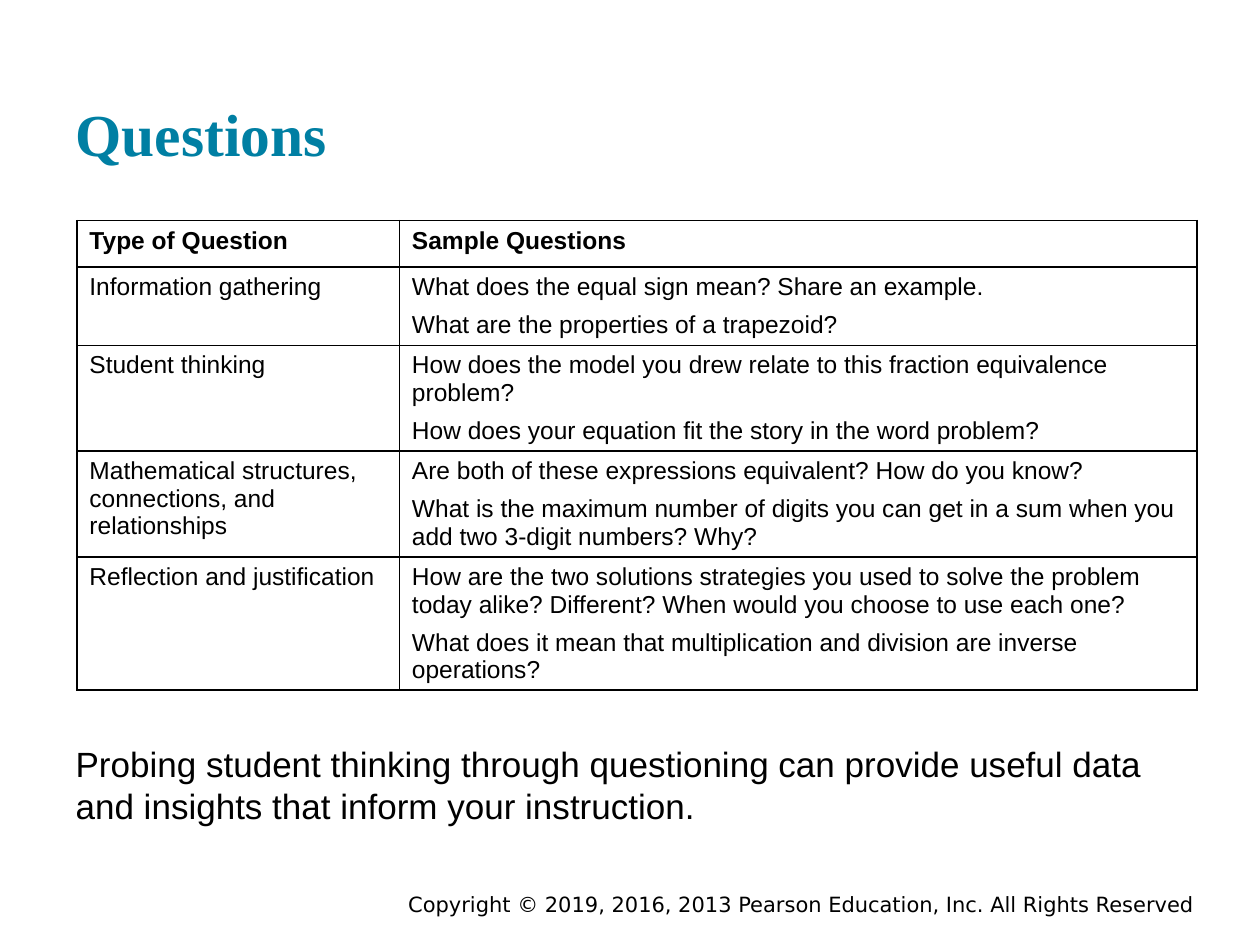
from dataclasses import dataclass

from pptx import Presentation, util as u
from pptx.dml.color import RGBColor
from pptx.enum import text as t
from pptx.oxml import parse_xml
from pptx.oxml.ns import nsdecls


@dataclass(frozen=True)
class Theme:
    black: str = "000000"
    teal: str = "007FA3"
    serif: str = "Times New Roman"
    sans: str = "Arial"
    legal: str = "DejaVu Sans"
    head: int = 34
    body: int = 20
    cell: int = 14
    foot: int = 12


THEME = Theme()
COLS = [2.56, 6.33]
ROWS = [0.37, 0.59, 0.84, 0.84, 0.84]
TABLE = [
    (["Type of Question"], ["Sample Questions"]),
    (["Information gathering"],
     ["What does the equal sign mean? Share an example.",
      "What are the properties of a trapezoid?"]),
    (["Student thinking"],
     ["How does the model you drew relate to this fraction equivalence problem?",
      "How does your equation fit the story in the word problem?"]),
    (["Mathematical structures, connections, and relationships"],
     ["Are both of these expressions equivalent? How do you know?",
      "What is the maximum number of digits you can get in a sum "
      "when you add two 3-digit numbers? Why?"]),
    (["Reflection and justification"],
     ["How are the two solutions strategies you used to solve the problem "
      "today alike? Different? When would you choose to use each one?",
      "What does it mean that multiplication and division are inverse operations?"]),
]


def place(shape, left, top, width, height):
    shape.left, shape.top = u.Inches(left), u.Inches(top)
    shape.width, shape.height = u.Inches(width), u.Inches(height)


def set_frame(frame, anchor, inset):
    frame.word_wrap = True
    frame.auto_size = t.MSO_AUTO_SIZE.NONE
    frame.vertical_anchor = anchor
    frame.margin_left = frame.margin_right = u.Inches(inset)
    frame.margin_top = frame.margin_bottom = u.Inches(inset)


def write(para, words, face, size, color=THEME.black, bold=False,
          align=t.PP_ALIGN.LEFT, before=0):
    para.alignment = align
    para.space_before = u.Pt(before)
    run = para.add_run()
    run.text = words
    font = run.font
    font.name, font.size, font.bold = face, u.Pt(size), bold
    font.color.rgb = RGBColor.from_string(color)


def add_title(slide, words):
    shape = slide.shapes.title
    place(shape, 0.5, 0.24, 9, 1.2)
    set_frame(shape.text_frame, t.MSO_ANCHOR.BOTTOM, 0.1)
    write(shape.text_frame.paragraphs[0], words, THEME.serif, THEME.head,
          THEME.teal, bold=True)


def add_body(slide, words):
    shape = slide.placeholders[1]
    place(shape, 0.5, 5.79, 9, 0.78)
    set_frame(shape.text_frame, t.MSO_ANCHOR.TOP, 0.1)
    para = shape.text_frame.paragraphs[0]
    # Plain paragraph: no bullet, no hanging indent
    props = para._p.get_or_add_pPr()
    props.set("marL", "0")
    props.set("indent", "0")
    props.append(parse_xml(f"<a:buNone {nsdecls('a')}/>"))
    write(para, words, THEME.sans, THEME.body)


def add_borders(cell):
    props = cell._tc.get_or_add_tcPr()
    for pos, side in enumerate(("lnL", "lnR", "lnT", "lnB")):
        props.insert(pos, parse_xml(
            f'<a:{side} {nsdecls("a")} w="{u.Pt(1)}"><a:solidFill>'
            f'<a:srgbClr val="{THEME.black}"/></a:solidFill></a:{side}>'))


def fill_cell(cell, lines, bold):
    cell.fill.background()
    add_borders(cell)
    frame = cell.text_frame
    for i, line in enumerate(lines):
        para = frame.add_paragraph() if i else frame.paragraphs[0]
        write(para, line, THEME.sans, THEME.cell, bold=bold,
              before=6 if i else 0)


def add_grid(slide):
    frame = slide.shapes.add_table(
        len(ROWS), len(COLS), u.Inches(0.61), u.Inches(1.75),
        u.Inches(sum(COLS)), u.Inches(sum(ROWS)))
    table = frame.table
    table.first_row = table.horz_banding = False
    for col, width in zip(table.columns, COLS):
        col.width = u.Inches(width)
    for r, (row, height) in enumerate(zip(table.rows, ROWS)):
        row.height = u.Inches(height)
        for cell, lines in zip(row.cells, TABLE[r]):
            fill_cell(cell, lines, bold=r == 0)


def add_footer(slide, words):
    box = slide.shapes.add_textbox(0, 0, 0, 0)
    place(box, 2.92, 7.05, 6.66, 0.25)
    set_frame(box.text_frame, t.MSO_ANCHOR.MIDDLE, 0.1)
    box.text_frame.margin_top = box.text_frame.margin_bottom = 0
    write(box.text_frame.paragraphs[0], words, THEME.legal, THEME.foot,
          align=t.PP_ALIGN.RIGHT)


def main():
    deck = Presentation()
    deck.slide_width, deck.slide_height = u.Inches(10), u.Inches(7.5)
    slide = deck.slides.add_slide(deck.slide_layouts[1])

    # Heading, question table, closing remark, copyright line
    add_title(slide, "Questions")
    add_grid(slide)
    add_body(slide, "Probing student thinking through questioning can provide "
                    "useful data and insights that inform your instruction.")
    add_footer(slide, "Copyright © 2019, 2016, 2013 Pearson Education, Inc. "
                      "All Rights Reserved")
    deck.save("out.pptx")


if __name__ == "__main__":
    main()
